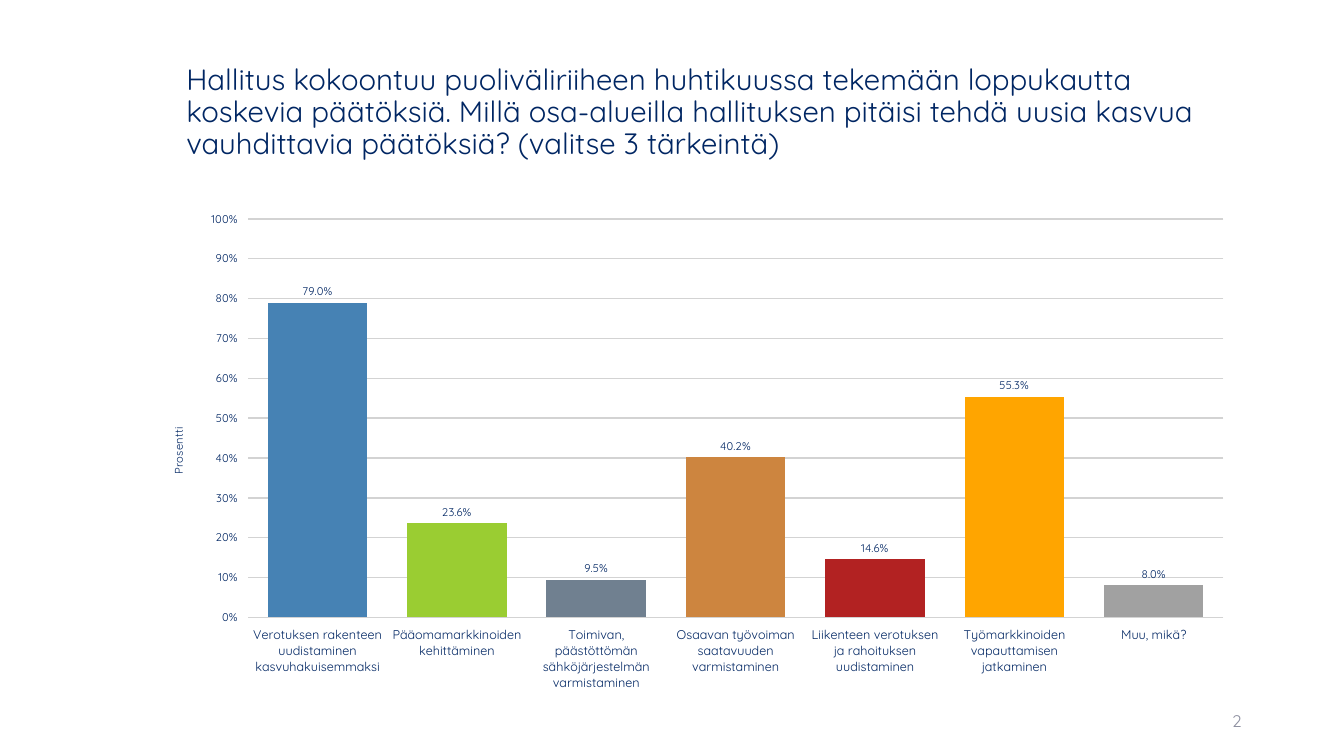
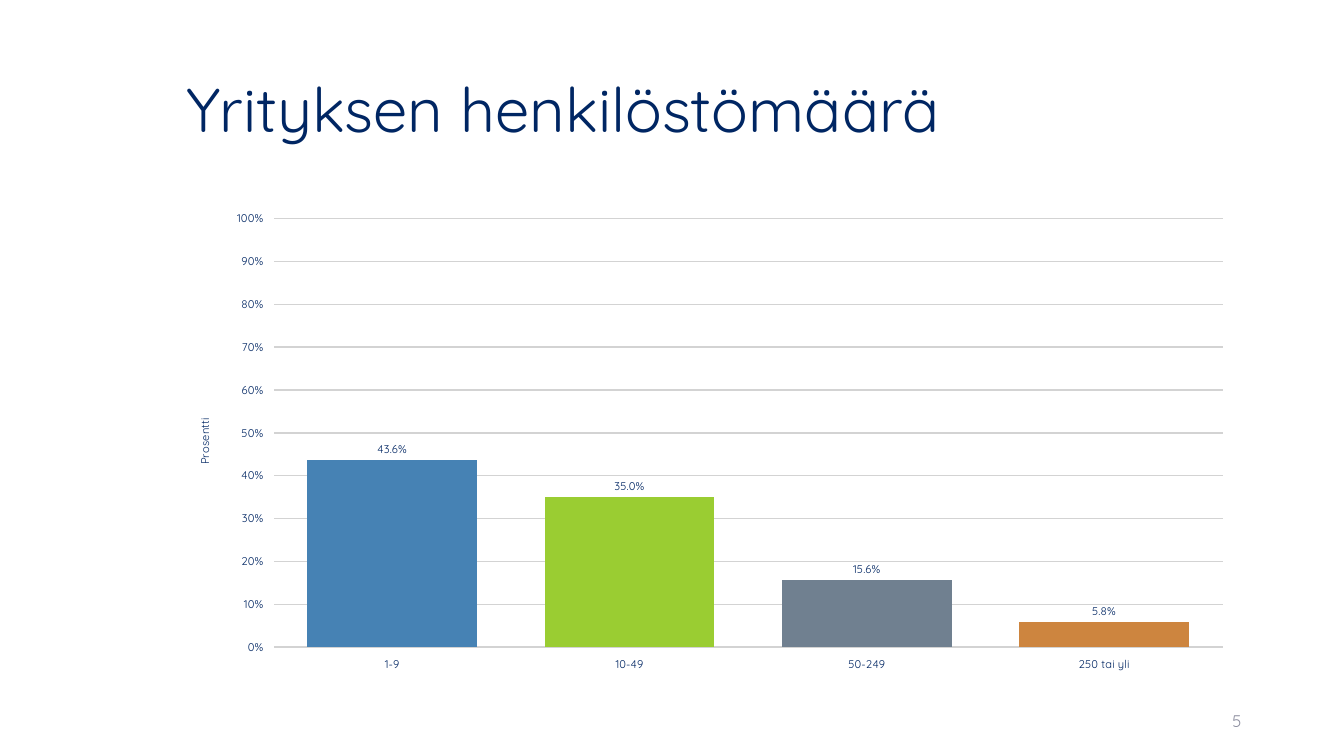
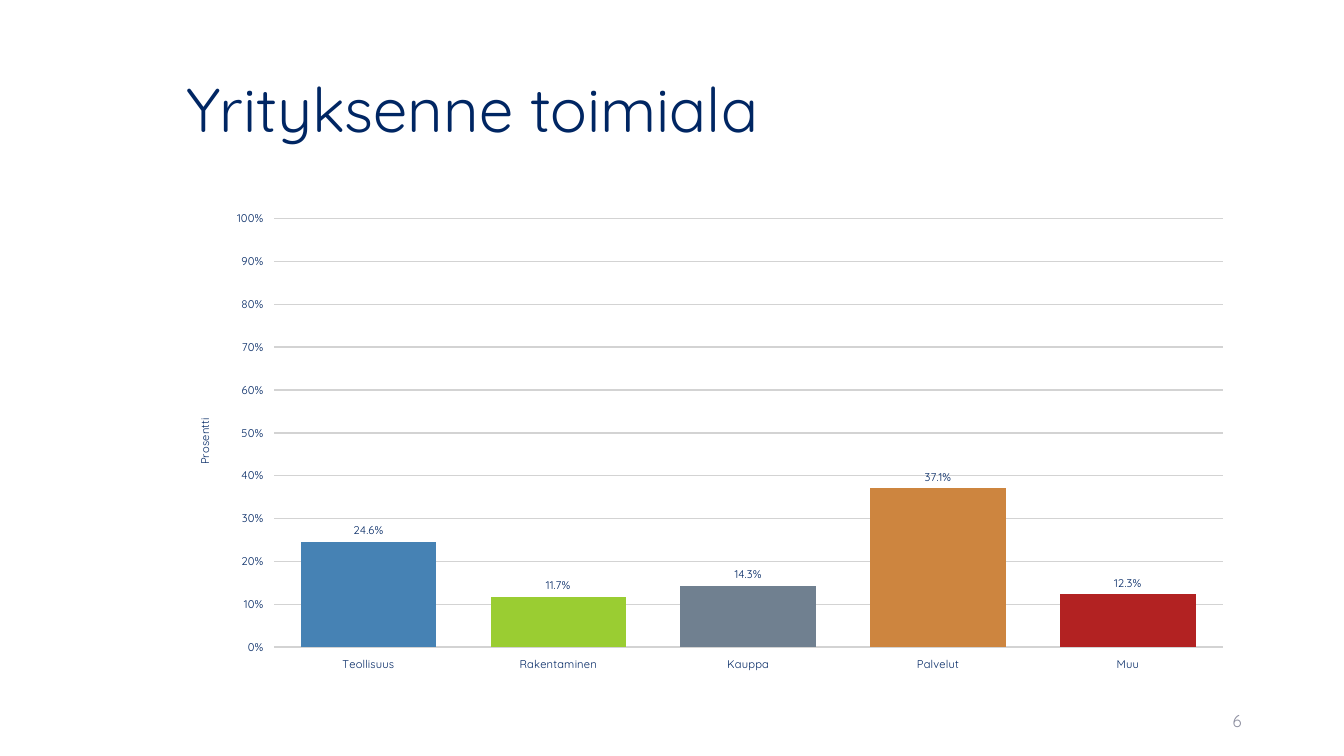
from pptx import Presentation
from pptx.chart.data import CategoryChartData
from pptx.dml.color import RGBColor
from pptx.enum.chart import XL_CHART_TYPE, XL_LABEL_POSITION, XL_TICK_MARK
from pptx.enum.text import MSO_ANCHOR, PP_ALIGN
from pptx.util import Pt

PX = 9525
FONT = "Quicksand"
COLORS = {"navy": "002663", "page": "8C8E9F", "grid": "D3D3D3"}
BARS = ["4682B4", "9ACD32", "708090", "CD853F", "B22222", "FFA500", "A1A1A1"]
TITLE = (168, 38, 1017, 139)
PAGE = (904, 667, 288, 38)
WIDE = (143, 192, 1043, 475)
PLAIN = (168, 192, 1017, 457)

# title, title size, page, chart box, category size, {category: share}
SLIDES = [
    ("Hallitus kokoontuu puoliväliriiheen huhtikuussa tekemään loppukautta "
     "koskevia päätöksiä. Millä osa-alueilla hallituksen pitäisi tehdä uusia "
     "kasvua vauhdittavia päätöksiä? (valitse 3 tärkeintä)",
     21, "2", WIDE, 9,
     {"Verotuksen rakenteen uudistaminen kasvuhakuisemmaksi": 0.79,
      "Pääomamarkkinoiden kehittäminen": 0.236,
      "Toimivan, päästöttömän sähköjärjestelmän varmistaminen": 0.095,
      "Osaavan työvoiman saatavuuden varmistaminen": 0.402,
      "Liikenteen verotuksen ja rahoituksen uudistaminen": 0.146,
      "Työmarkkinoiden vapauttamisen jatkaminen": 0.553,
      "Muu, mikä?": 0.08}),
    ("Yrityksen henkilöstömäärä", 44, "5", PLAIN, 8,
     {"1-9": 0.436, "10-49": 0.35, "50-249": 0.156, "250 tai yli": 0.058}),
    ("Yrityksenne toimiala", 44, "6", PLAIN, 8,
     {"Teollisuus": 0.246, "Rakentaminen": 0.117, "Kauppa": 0.143,
      "Palvelut": 0.371, "Muu": 0.123}),
]


def emu(box):
    return [n * PX for n in box]


def style(font, size, color="navy"):
    font.name = FONT
    font.size = Pt(size)
    font.bold = False
    font.color.rgb = RGBColor.from_string(COLORS[color])


def add_text(slide, box, text, size, color="navy", align=PP_ALIGN.LEFT):
    frame = slide.shapes.add_textbox(*emu(box)).text_frame
    frame.word_wrap = True
    frame.vertical_anchor = MSO_ANCHOR.MIDDLE
    para = frame.paragraphs[0]
    para.alignment = align
    run = para.add_run()
    run.text = text
    style(run.font, size, color)
    return para


def style_axis(axis, size):
    axis.major_tick_mark = XL_TICK_MARK.OUTSIDE
    axis.minor_tick_mark = XL_TICK_MARK.NONE
    axis.format.line.fill.background()
    style(axis.tick_labels.font, size)


def style_values(axis):
    """Scale, grid and title of the percent axis."""
    style_axis(axis, 8)
    axis.minimum_scale, axis.maximum_scale = 0, 1
    axis.major_unit = 0.1
    axis.tick_labels.number_format = "0%"
    axis.tick_labels.number_format_is_linked = False
    line = axis.major_gridlines.format.line
    line.width = Pt(1)
    line.color.rgb = RGBColor.from_string(COLORS["grid"])
    run = axis.axis_title.text_frame.paragraphs[0].add_run()
    run.text = "Prosentti"
    style(run.font, 8)


def add_bars(slide, box, size, shares):
    data = CategoryChartData(number_format="0.0%")
    data.categories = list(shares)
    data.add_series("Series 1", list(shares.values()))
    chart = slide.shapes.add_chart(
        XL_CHART_TYPE.COLUMN_CLUSTERED, *emu(box), data).chart
    chart.has_legend = False
    chart.has_title = False
    style(chart.font, 18)
    style_axis(chart.category_axis, size)
    style_values(chart.value_axis)

    plot = chart.plots[0]
    plot.vary_by_categories = False
    plot.gap_width = 40
    plot.overlap = -2
    series = plot.series[0]
    for i in range(len(shares)):
        fill = series.points[i].format.fill
        fill.solid()
        fill.fore_color.rgb = RGBColor.from_string(BARS[i])
    labels = series.data_labels
    labels.show_value = True
    labels.number_format = "0.0%"
    labels.number_format_is_linked = False
    labels.position = XL_LABEL_POSITION.OUTSIDE_END
    style(labels.font, 8)


def main():
    deck = Presentation()
    deck.slide_width, deck.slide_height = emu((1280, 720))
    for title, size, page, box, small, shares in SLIDES:
        slide = deck.slides.add_slide(deck.slide_layouts[6])
        add_text(slide, TITLE, title, size).line_spacing = 0.9
        para = add_text(slide, PAGE, page, 12, "page", PP_ALIGN.RIGHT)
        para.space_after = Pt(6)
        add_bars(slide, box, small, shares)
    deck.save("out.pptx")


if __name__ == "__main__":
    main()
